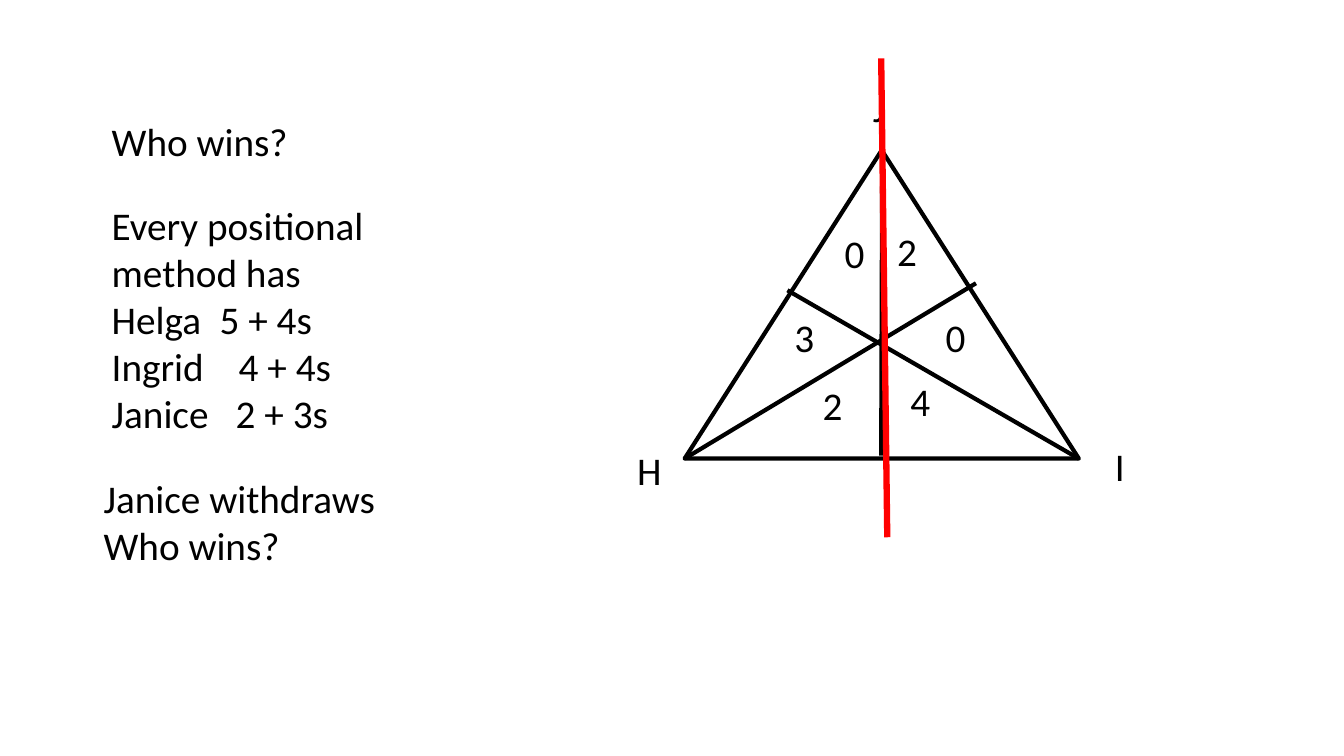
from dataclasses import dataclass

from lxml import etree
from pptx import Presentation
from pptx import util as u
from pptx.dml.color import RGBColor
from pptx.enum import shapes, text
from pptx.oxml import ns


@dataclass(frozen=True)
class Theme:
    font: str = "Calibri"
    size: float = 28
    ink: RGBColor = RGBColor(0x00, 0x00, 0x00)
    accent: RGBColor = RGBColor(0xFF, 0x00, 0x00)
    line_width: float = 3
    accent_width: float = 4.5


THEME = Theme()

# Triangle corners and the feet of the lines drawn from them
J, H, I = (8.75, 1.49), (6.79, 4.55), (10.7, 4.55)
MEDIANS = [(J, (8.74, 4.52)), ((9.68, 2.81), H), ((7.81, 2.88), I)]

LABEL_SIZE = (0.47, 0.67)
LABELS = [
    ("0", 8.28, 2.23), ("2", 8.8, 2.21), ("3", 7.78, 3.06),
    ("0", 9.28, 3.06), ("2", 8.06, 3.73), ("4", 8.93, 3.69),
    ("J", 8.56, 0.78), ("H", 6.22, 4.38), ("I", 10.96, 4.34),
]

# Each line of a text block, with the tab position of its score if it has one
SCORES = [
    ("Every positional method has", None),
    ("Helga\t5 + 4s", 1.07),
    ("Ingrid\t4 + 4s", 1.26),
    ("Janice\t2 + 3s", 1.23),
]


def add_tab_stop(paragraph, position):
    properties = paragraph._p.get_or_add_pPr()
    tab_list = etree.SubElement(properties, ns.qn("a:tabLst"))
    etree.SubElement(tab_list, ns.qn("a:tab"), pos=str(u.Inches(position)), algn="l")


def add_text(slide, lines, left, top, width, height):
    box = slide.shapes.add_textbox(*map(u.Inches, (left, top, width, height)))
    frame = box.text_frame
    frame.word_wrap = True
    frame.auto_size = text.MSO_AUTO_SIZE.SHAPE_TO_FIT_TEXT
    for index, (line, tab) in enumerate(lines):
        paragraph = frame.paragraphs[0] if index == 0 else frame.add_paragraph()
        paragraph.text = line
        if tab:
            add_tab_stop(paragraph, tab)
        for run in paragraph.runs:
            run.font.name = THEME.font
            run.font.size = u.Pt(THEME.size)
            run.font.color.rgb = THEME.ink


def add_line(slide, start, end, color, width):
    line = slide.shapes.add_connector(
        shapes.MSO_CONNECTOR.STRAIGHT, *map(u.Inches, (*start, *end)))
    line.line.color.rgb = color
    line.line.width = u.Pt(width)
    etree.SubElement(line._element.spPr, ns.qn("a:effectLst"))


def add_triangle(slide):
    triangle = slide.shapes.add_shape(
        shapes.MSO_SHAPE.ISOSCELES_TRIANGLE,
        *map(u.Inches, (H[0], J[1], I[0] - H[0], H[1] - J[1])))
    triangle.shadow.inherit = False
    triangle.fill.background()
    triangle.line.color.rgb = THEME.ink
    triangle.line.width = u.Pt(THEME.line_width)


def main():
    presentation = Presentation()
    presentation.slide_width = u.Inches(13.33)
    presentation.slide_height = u.Inches(7.5)
    slide = presentation.slides.add_slide(presentation.slide_layouts[6])

    # First question
    add_text(slide, [("Who wins?", None)], 1.01, 1.11, 2.11, 0.57)

    # Voting triangle with its regions and corners
    add_triangle(slide)
    for start, end in MEDIANS:
        add_line(slide, start, end, THEME.ink, THEME.line_width)
    for label, left, top in LABELS:
        add_text(slide, [(label, None)], left, top, *LABEL_SIZE)

    # Scores and second question
    add_text(slide, SCORES, 1.01, 1.95, 2.8, 2.46)
    add_text(slide, [("Janice withdraws", None), ("Who wins?", None)],
             0.93, 4.66, 3.24, 1.04)

    # Dividing line
    add_line(slide, (8.8, 5.33), (8.74, 0.58), THEME.accent, THEME.accent_width)

    presentation.save("out.pptx")


if __name__ == "__main__":
    main()
